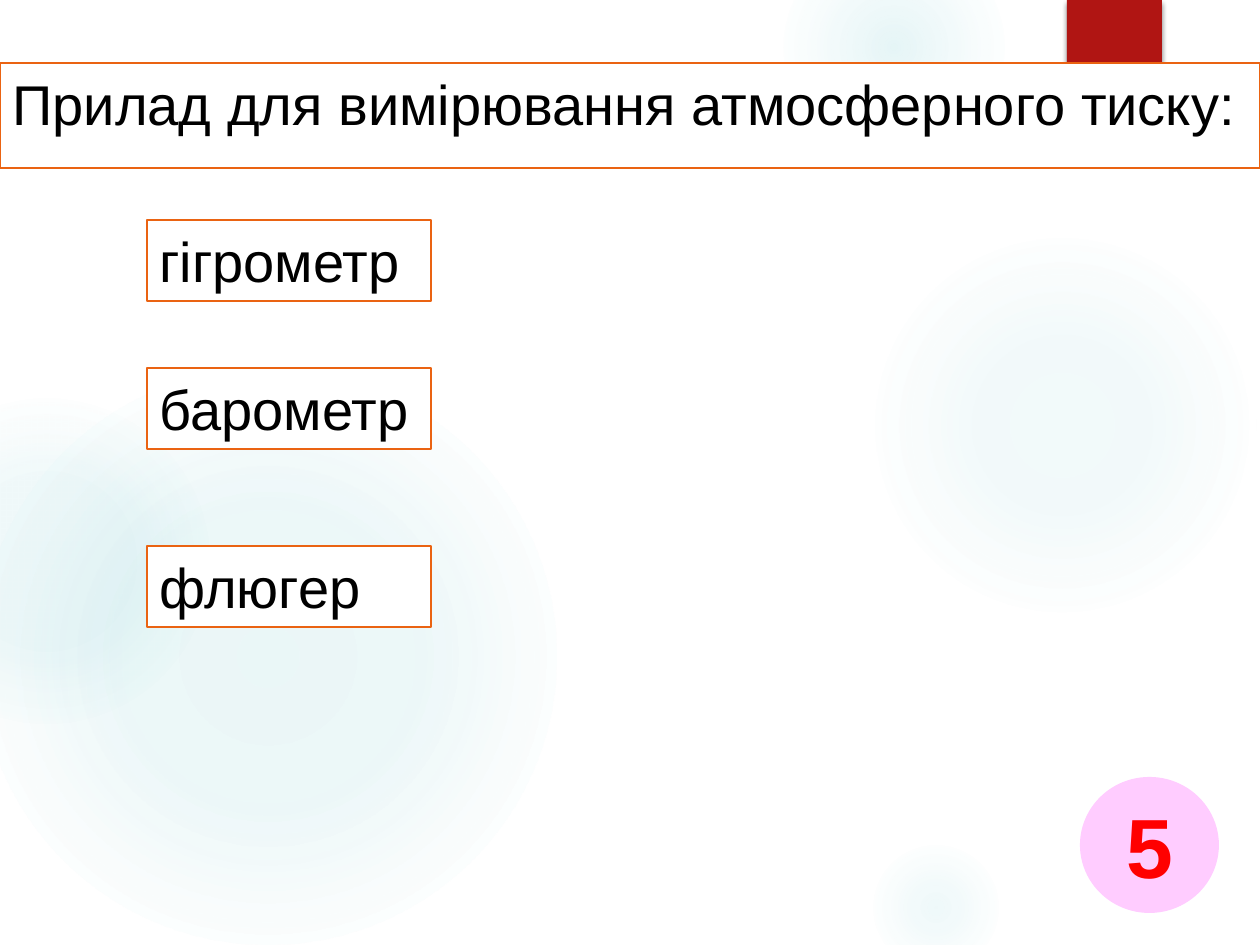
from dataclasses import dataclass

from lxml import etree
from pptx import Presentation
from pptx.dml.color import RGBColor
from pptx.enum.shapes import MSO_SHAPE
from pptx.enum.text import MSO_ANCHOR, MSO_AUTO_SIZE, PP_ALIGN
from pptx.oxml import parse_xml
from pptx.oxml.ns import nsdecls, qn
from pptx.util import Emu, Pt

RECT, OVAL = MSO_SHAPE.RECTANGLE, MSO_SHAPE.OVAL
TOP, MIDDLE = MSO_ANCHOR.TOP, MSO_ANCHOR.MIDDLE
LEFT, CENTER = PP_ALIGN.LEFT, PP_ALIGN.CENTER
GROW, FIXED = MSO_AUTO_SIZE.SHAPE_TO_FIT_TEXT, MSO_AUTO_SIZE.NONE
SCALE = 914400 / 126


@dataclass(frozen=True)
class Theme:
    font: str = "Arial"
    paper: str = "FFFFFF"
    ink: str = "000000"
    edge: str = "EA6312"
    glow: str = "4CB9C3"
    tab: str = "B01513"
    badge: str = "FFCCFF"
    digit: str = "FF0000"
    text: int = 32
    number: int = 48
    border: float = 1.5


@dataclass(frozen=True)
class Box:
    x: int
    y: int
    w: int
    h: int

    def emu(self) -> list[Emu]:
        return [px(n) for n in (self.x, self.y, self.w, self.h)]


@dataclass(frozen=True)
class Glow:
    """A soft round spot: corner, diameter, two opacities and where it fades out (%)."""
    x: int
    y: int
    size: int
    core: int
    mid: int
    fade: int


THEME = Theme()
GLOWS = [
    Glow(868, 231, 388, 7, 6, 69),
    Glow(784, -63, 220, 14, 7, 73),
    Glow(868, 840, 136, 9, 5, 66),
    Glow(-21, 368, 577, 11, 10, 75),
    Glow(-116, 399, 325, 8, 8, 72),
]
ANSWERS = {"гігрометр": 220, "барометр": 368, "флюгер": 546}


def px(n: int) -> Emu:
    return Emu(round(n * SCALE))


def add_form(slide, kind: MSO_SHAPE, box: Box, color: str):
    form = slide.shapes.add_shape(kind, *box.emu())
    form.shadow.inherit = False
    paint(form, color)
    form.line.fill.background()
    return form


def paint(form, color: str) -> None:
    form.fill.solid()
    form.fill.fore_color.rgb = RGBColor.from_string(color)


def add_glow(slide, glow: Glow) -> None:
    box = Box(glow.x, glow.y, glow.size, glow.size)
    form = add_form(slide, OVAL, box, THEME.glow)
    stops = [(0, glow.core), (36, glow.mid), (glow.fade, 0), (100, 0)]
    marks = "".join(
        f'<a:gs pos="{at * 1000}"><a:srgbClr val="{THEME.glow}">'
        f'<a:alpha val="{alpha * 1000}"/></a:srgbClr></a:gs>'
        for at, alpha in stops)
    grad = parse_xml(
        f'<a:gradFill {nsdecls("a")} rotWithShape="1"><a:gsLst>{marks}</a:gsLst>'
        '<a:path path="circle"><a:fillToRect l="50000" t="50000" r="50000" b="50000"/>'
        '</a:path></a:gradFill>')
    props = form._element.spPr
    props.replace(props.find(qn("a:solidFill")), grad)


def add_tab(slide) -> None:
    form = add_form(slide, RECT, Box(1067, 0, 95, 151), THEME.tab)
    effects = form._element.spPr.find(qn("a:effectLst"))
    shade = etree.SubElement(effects, qn("a:outerShdw"), blurRad=str(Pt(3)),
                             dist=str(Pt(2)), dir="5400000", rotWithShape="0")
    color = etree.SubElement(shade, qn("a:srgbClr"), val=THEME.ink)
    etree.SubElement(color, qn("a:alpha"), val="45000")


def write(form, text: str, size: int, color: str, bold: bool = False,
          align: PP_ALIGN = LEFT, anchor: MSO_ANCHOR = TOP,
          fit: MSO_AUTO_SIZE = GROW) -> None:
    frame = form.text_frame
    frame.text = text
    look = {"word_wrap": True, "auto_size": fit, "vertical_anchor": anchor}
    for name, value in look.items():
        setattr(frame, name, value)
    para = frame.paragraphs[0]
    para.alignment = align
    font = para.runs[0].font
    style = {"name": THEME.font, "size": Pt(size), "bold": bold}
    for name, value in style.items():
        setattr(font, name, value)
    font.color.rgb = RGBColor.from_string(color)


def frame_text(form, text: str) -> None:
    """Give a form the white, orange-edged look and its words."""
    paint(form, THEME.paper)
    form.line.color.rgb = RGBColor.from_string(THEME.edge)
    form.line.width = Pt(THEME.border)
    write(form, text, THEME.text, THEME.ink)


def add_title(slide, text: str) -> None:
    title = slide.shapes.title
    spots = zip(("left", "top", "width", "height"), Box(0, 63, 1260, 81).emu())
    for name, value in spots:
        setattr(title, name, value)
    frame_text(title, text)
    slide.shapes._spTree.append(title._element)  # bring in front of the tab


def main() -> None:
    deck = Presentation()
    deck.slide_width, deck.slide_height = px(1260), px(945)
    slide = deck.slides.add_slide(deck.slide_layouts[5])
    for glow in GLOWS:
        add_glow(slide, glow)
    add_tab(slide)
    add_title(slide, "Прилад для вимірювання атмосферного тиску:")
    badge = add_form(slide, OVAL, Box(1080, 777, 139, 136), THEME.badge)
    write(badge, "5", THEME.number, THEME.digit, True, CENTER, MIDDLE, FIXED)
    for text, y in ANSWERS.items():
        frame_text(add_form(slide, RECT, Box(147, y, 284, 81), THEME.paper), text)
    deck.save("out.pptx")


if __name__ == "__main__":
    main()
